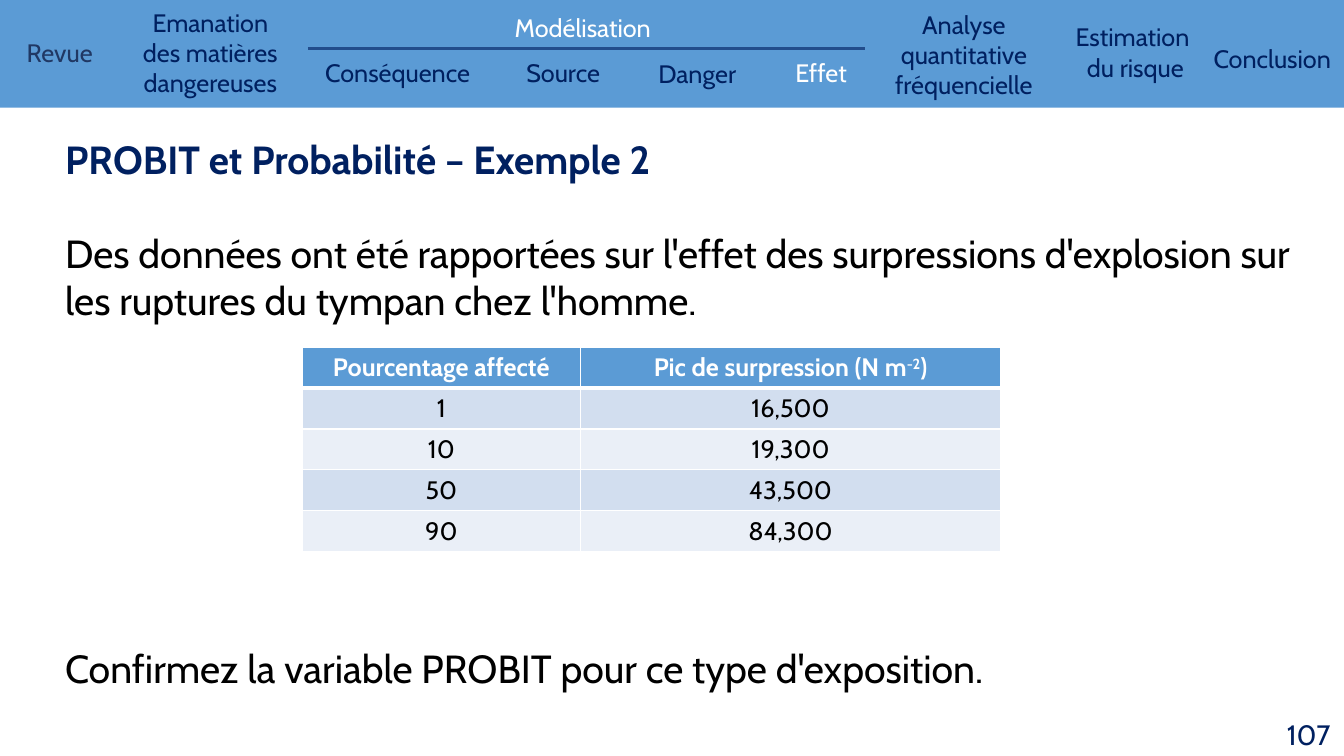
from lxml import etree
from pptx import Presentation
from pptx.dml.color import RGBColor
from pptx.enum.shapes import MSO_CONNECTOR, MSO_SHAPE
from pptx.enum.text import MSO_ANCHOR, PP_ALIGN
from pptx.oxml.ns import qn
from pptx.util import Pt

LEFT, CENTER, RIGHT = PP_ALIGN.LEFT, PP_ALIGN.CENTER, PP_ALIGN.RIGHT
TOP, MIDDLE = MSO_ANCHOR.TOP, MSO_ANCHOR.MIDDLE
RECTANGLE = MSO_SHAPE.RECTANGLE
STRAIGHT = MSO_CONNECTOR.STRAIGHT

NAVY = RGBColor(0x00, 0x20, 0x60)
SLATE = RGBColor(0x20, 0x38, 0x64)
RULE_BLUE = RGBColor(0x22, 0x4D, 0x8C)
BLUE = RGBColor(0x5B, 0x9B, 0xD5)
BAND_DARK = RGBColor(0xD2, 0xDE, 0xEF)
BAND_LIGHT = RGBColor(0xEA, 0xEF, 0xF7)
WHITE = RGBColor(0xFF, 0xFF, 0xFF)
BLACK = RGBColor(0x00, 0x00, 0x00)

FONT = "Cabin"
NAV_SIZE, PAGE_SIZE, BODY_SIZE = 18, 20, 28

# left, top, width, height, lines, colour, alignment
NAV_ITEMS = [
    (12, 23, 80, 29, ["Revue"], SLATE, LEFT),
    (91.5, 1.5, 117.5, 72, ["Emanation des matières dangereuses"], NAVY, CENTER),
    (220, 5.5, 392.5, 29, ["Modélisation"], WHITE, CENTER),
    (220, 37.5, 128, 29, ["Conséquence"], NAVY, CENTER),
    (330.5, 37.5, 143.5, 29, ["Source"], NAVY, CENTER),
    (439, 38, 118, 27.5, ["Danger"], NAVY, CENTER),
    (523.5, 37.5, 126, 28, ["Effet"], WHITE, CENTER),
    (625.5, 3, 126, 69, ["Analyse quantitative fréquencielle"], NAVY, CENTER),
    (748, 12, 126, 50, ["Estimation ", "du risque"], NAVY, CENTER),
    (852.5, 27.5, 112.5, 31, ["Conclusion"], NAVY, CENTER),
]

TABLE_ROWS = [
    [["Pourcentage affecté"], ["Pic de surpression (N m", "-2", ")"]],
    [["1"], ["16,500"]],
    [["10"], ["19,300"]],
    [["50"], ["43,500"]],
    [["90"], ["84,300"]],
]


class SlideBuilder:
    def __init__(self, page, font):
        self.page = page
        self.font = font

    def add_span(self, para, text, size, color, bold=False, superscript=False):
        span = para.add_run()
        span.text = text
        span.font.name = self.font
        span.font.size = Pt(size)
        span.font.bold = bold
        span.font.color.rgb = color
        if superscript:
            span._r.get_or_add_rPr().set("baseline", "30000")

    def text(self, left, top, width, height, lines, color, align=LEFT,
             size=NAV_SIZE, bold=False, anchor=TOP):
        box = self.page.shapes.add_textbox(Pt(left), Pt(top), Pt(width), Pt(height))
        frame = box.text_frame
        frame.word_wrap = True
        frame.vertical_anchor = anchor
        for index, line in enumerate(lines):
            para = frame.add_paragraph() if index else frame.paragraphs[0]
            para.alignment = align
            self.add_span(para, line, size, color, bold)

    def band(self, left, top, width, height, color):
        shape = self.page.shapes.add_shape(
            RECTANGLE, Pt(left), Pt(top), Pt(width), Pt(height))
        shape.shadow.inherit = False
        shape.fill.solid()
        shape.fill.fore_color.rgb = color
        shape.line.fill.background()

    def rule(self, left, right, y, color, weight):
        line = self.page.shapes.add_connector(
            STRAIGHT, Pt(left), Pt(y), Pt(right), Pt(y))
        line.line.color.rgb = color
        line.line.width = Pt(weight)
        etree.SubElement(line._element.spPr, qn("a:effectLst"))

    def cell_borders(self, cell, color, weights):
        properties = cell._tc.get_or_add_tcPr()
        for side, weight in weights.items():
            edge = etree.SubElement(properties, qn(f"a:ln{side}"), w=str(Pt(weight)))
            fill = etree.SubElement(edge, qn("a:solidFill"))
            etree.SubElement(fill, qn("a:srgbClr"), val=str(color))

    def table(self, left, top, widths, row_height, rows):
        """Each cell is a list of runs; every second run is a superscript."""
        table = self.page.shapes.add_table(
            len(rows), len(widths), Pt(left), Pt(top),
            Pt(sum(widths)), Pt(row_height * len(rows))).table
        for column, width in zip(table.columns, widths):
            column.width = Pt(width)
        for r, row in enumerate(rows):
            table.rows[r].height = Pt(row_height)
            header = r == 0
            band = BLUE if header else (BAND_DARK if r % 2 else BAND_LIGHT)
            for c, spans in enumerate(row):
                cell = table.cell(r, c)
                weights = {"L": 1, "R": 1, "T": 3 if r == 1 else 1,
                           "B": 3 if header else 1}
                self.cell_borders(cell, WHITE, weights)
                cell.fill.solid()
                cell.fill.fore_color.rgb = band
                para = cell.text_frame.paragraphs[0]
                para.alignment = CENTER
                for index, text in enumerate(spans):
                    self.add_span(para, text, NAV_SIZE, WHITE if header else BLACK,
                                  bold=header, superscript=index % 2 == 1)


def main():
    deck = Presentation()
    deck.slide_width, deck.slide_height = Pt(960), Pt(540)
    page = deck.slides.add_slide(deck.slide_layouts[6])
    builder = SlideBuilder(page, FONT)

    builder.band(0, 0, 960, 77, BLUE)
    for item in NAV_ITEMS:
        builder.text(*item)
    builder.rule(220, 618, 34.5, RULE_BLUE, 2.25)

    builder.text(39.5, 93, 918, 41, ["PROBIT et Probabilité – Exemple 2"],
                 NAVY, size=BODY_SIZE, bold=True)
    builder.text(39.5, 160, 918, 75,
                 ["Des données ont été rapportées sur l'effet des surpressions "
                  "d'explosion sur les ruptures du tympan chez l'homme."],
                 BLACK, size=BODY_SIZE)
    builder.table(216, 248, [198.5, 300.5], 29.2, TABLE_ROWS)
    builder.text(39.5, 457, 918, 41,
                 ["Confirmez la variable PROBIT pour ce type d'exposition."],
                 BLACK, size=BODY_SIZE)
    builder.text(733.5, 510, 224, 29, ["107"], NAVY, RIGHT,
                 size=PAGE_SIZE, anchor=MIDDLE)

    deck.save("out.pptx")


if __name__ == "__main__":
    main()
